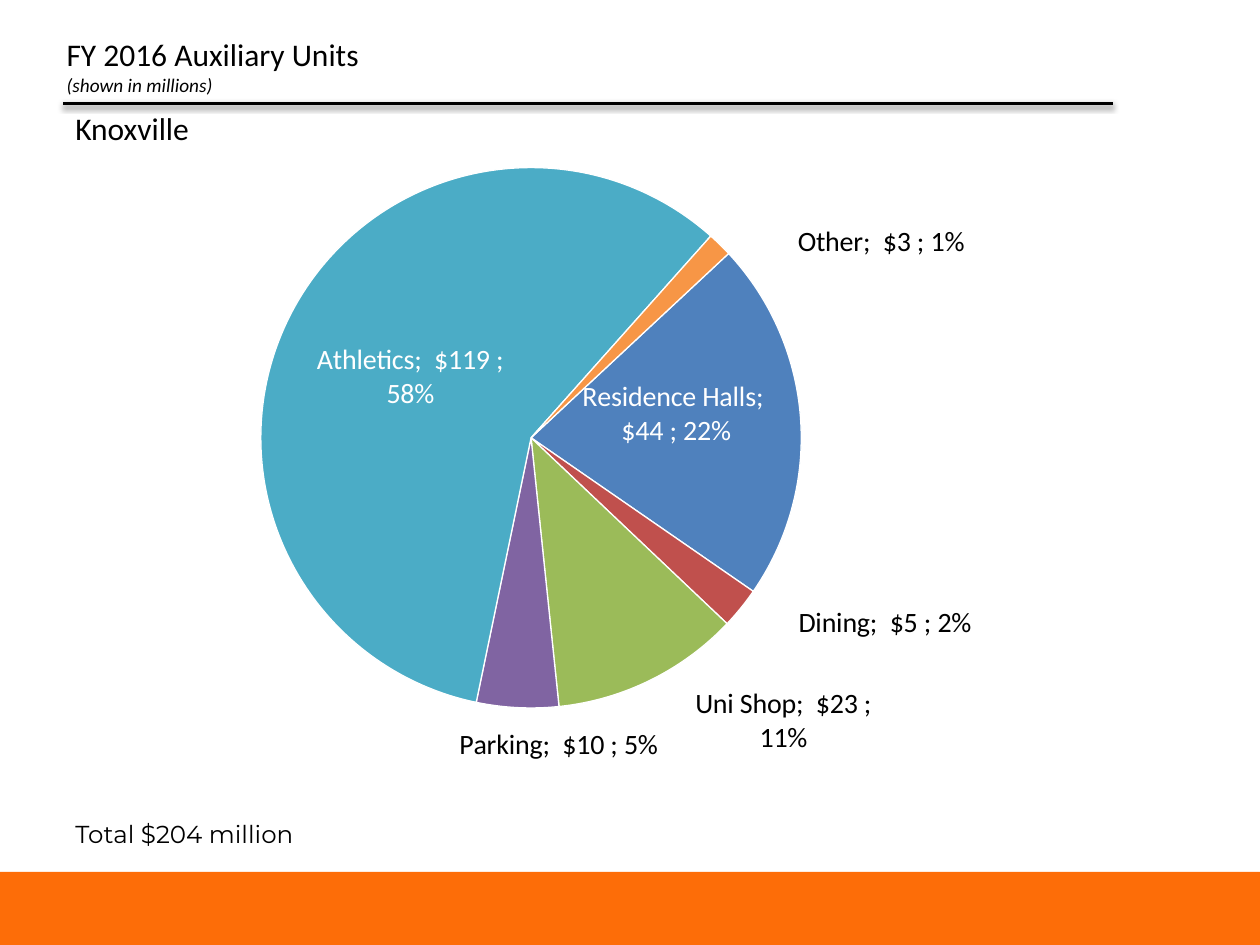
"""Build the auxiliary units slide with its labelled pie chart."""
from dataclasses import dataclass

from lxml.etree import SubElement
from pptx import Presentation
from pptx.chart.data import CategoryChartData
from pptx.dml.color import RGBColor
from pptx.enum.chart import XL_CHART_TYPE as ChartType, XL_LABEL_POSITION as LabelPosition
from pptx.enum.shapes import MSO_CONNECTOR as Connector, MSO_SHAPE as Preset
from pptx.enum.text import MSO_AUTO_SIZE as AutoSize
from pptx.oxml import parse_xml
from pptx.oxml.ns import nsdecls, qn
from pptx.util import Inches, Pt

BLACK, WHITE, ORANGE = "000000", "FFFFFF", "FD6D08"
DOLLARS = '_-"$"* #,##0_-;\\-"$"* #,##0_-;_-"$"* "-"'


@dataclass
class Unit:
    name: str
    millions: int
    color: str
    shift: tuple[float, float]
    inside: bool = False


@dataclass
class Line:
    text: str
    size: float
    font: str = "Calibri"
    italic: bool = False


UNITS = [
    Unit("Residence Halls", 44, "4F81BD", (0.01, -0.02), True),
    Unit("Dining", 5, "C0504D", (0.05, -0.01)),
    Unit("Uni Shop", 23, "9BBB59", (0.04, 0)),
    Unit("Parking", 10, "8064A2", (0.04, 0.02)),
    Unit("Athletics", 119, "4BACC6", (0, 0), True),
    Unit("Other", 3, "F79646", (0.07, 0.03)),
]


def rgb(value: str) -> RGBColor:
    return RGBColor.from_string(value)


def add_text(slide, left: float, top: float, width: float, height: float, lines: list[Line]) -> None:
    box = slide.shapes.add_textbox(Inches(left), Inches(top), Inches(width), Inches(height))
    frame = box.text_frame
    frame.word_wrap = True
    frame.auto_size = AutoSize.SHAPE_TO_FIT_TEXT
    paragraph = frame.paragraphs[0]
    for index, line in enumerate(lines):
        if index:
            paragraph.add_line_break()
        run = paragraph.add_run()
        run.text = line.text
        run.font.name = line.font
        run.font.size = Pt(line.size)
        run.font.italic = line.italic
        run.font.color.rgb = rgb(BLACK)


def add_footer(slide) -> None:
    footer = slide.shapes.add_shape(Preset.RECTANGLE, 0, Inches(6.92), Inches(10), Inches(0.58))
    footer.shadow.inherit = False
    footer.fill.solid()
    footer.fill.fore_color.rgb = rgb(ORANGE)
    footer.line.fill.background()


def add_rule(slide) -> None:
    rule = slide.shapes.add_connector(
        Connector.STRAIGHT, Inches(0.5), Inches(0.82), Inches(8.83), Inches(0.82))
    rule.line.color.rgb = rgb(BLACK)
    rule.line.width = Pt(2)
    properties = rule.element.find(qn("p:spPr"))
    properties.append(parse_xml(
        f'<a:effectLst {nsdecls("a")}><a:outerShdw blurRad="{Pt(3.1)}" dist="{Pt(1.6)}" '
        'dir="5400000" rotWithShape="0"><a:srgbClr val="000000"><a:alpha val="38000"/>'
        '</a:srgbClr></a:outerShdw></a:effectLst>'))


def manual_layout(**values) -> object:
    layout = parse_xml(f'<c:layout {nsdecls("c")}><c:manualLayout/></c:layout>')
    for name, value in values.items():
        SubElement(layout[0], qn(f"c:{name}")).set("val", str(value))
    return layout


def style_unit(point, unit: Unit) -> None:
    point.format.fill.solid()
    point.format.fill.fore_color.rgb = rgb(unit.color)
    point.format.line.color.rgb = rgb(WHITE)
    point.format.line.width = Pt(0.75)
    label = point.data_label
    label.font.size = Pt(16)
    label.font.name = "Calibri"
    label.font.color.rgb = rgb(WHITE if unit.inside else BLACK)
    label.position = LabelPosition.CENTER if unit.inside else LabelPosition.OUTSIDE_END


def add_pie(slide) -> None:
    data = CategoryChartData(number_format=DOLLARS)
    data.categories = [unit.name for unit in UNITS]
    data.add_series("Series 1", [unit.millions for unit in UNITS])
    chart = slide.shapes.add_chart(
        ChartType.PIE, Inches(0.75), Inches(1.05), Inches(8.25), Inches(5.33), data).chart
    chart.has_legend = False
    chart.has_title = False
    chart.font.name = "Calibri"
    chart.font.size = Pt(18)
    chart.font.color.rgb = rgb(BLACK)
    plot = chart.plots[0]
    plot.vary_by_categories = True
    series = plot.series[0]
    labels = series.data_labels
    labels.font.size = Pt(16)
    labels.show_value = labels.show_percentage = labels.show_category_name = True
    for index, unit in enumerate(UNITS):
        style_unit(series.points[index], unit)
    for leader in series._element.iter(qn("c:showLeaderLines")):
        leader.set("val", "0")
    for unit, label in zip(UNITS, series._element.iter(qn("c:dLbl"))):
        for name in ("showVal", "showCatName", "showPercent"):
            label.find(qn(f"c:{name}")).set("val", "1")
        label.insert(1, manual_layout(x=unit.shift[0], y=unit.shift[1]))
    pie = plot._element
    for angle in pie.findall(qn("c:firstSliceAng")):
        pie.remove(angle)
    SubElement(pie, qn("c:firstSliceAng")).set("val", "47")
    area = pie.getparent()
    for layout in area.findall(qn("c:layout")):
        area.remove(layout)
    area.insert(0, manual_layout(
        layoutTarget="inner", xMode="edge", yMode="edge", x=0.16, y=0.05, w=0.52, h=0.81))


def main() -> None:
    presentation = Presentation()
    presentation.slide_width, presentation.slide_height = Inches(10), Inches(7.5)
    slide = presentation.slides.add_slide(presentation.slide_layouts[6])
    add_footer(slide)
    add_rule(slide)
    add_text(slide, 0.43, 0.23, 8.49, 0.59, [
        Line("FY 2016 Auxiliary Units", 18), Line("(shown in millions)", 11, italic=True)])
    add_text(slide, 0.5, 6.45, 2.21, 0.34, [Line("Total $204 million", 14, "Montserrat")])
    add_pie(slide)
    add_text(slide, 0.5, 0.82, 1.8, 0.4, [Line("Knoxville", 18)])
    presentation.save("out.pptx")


if __name__ == "__main__":
    main()
